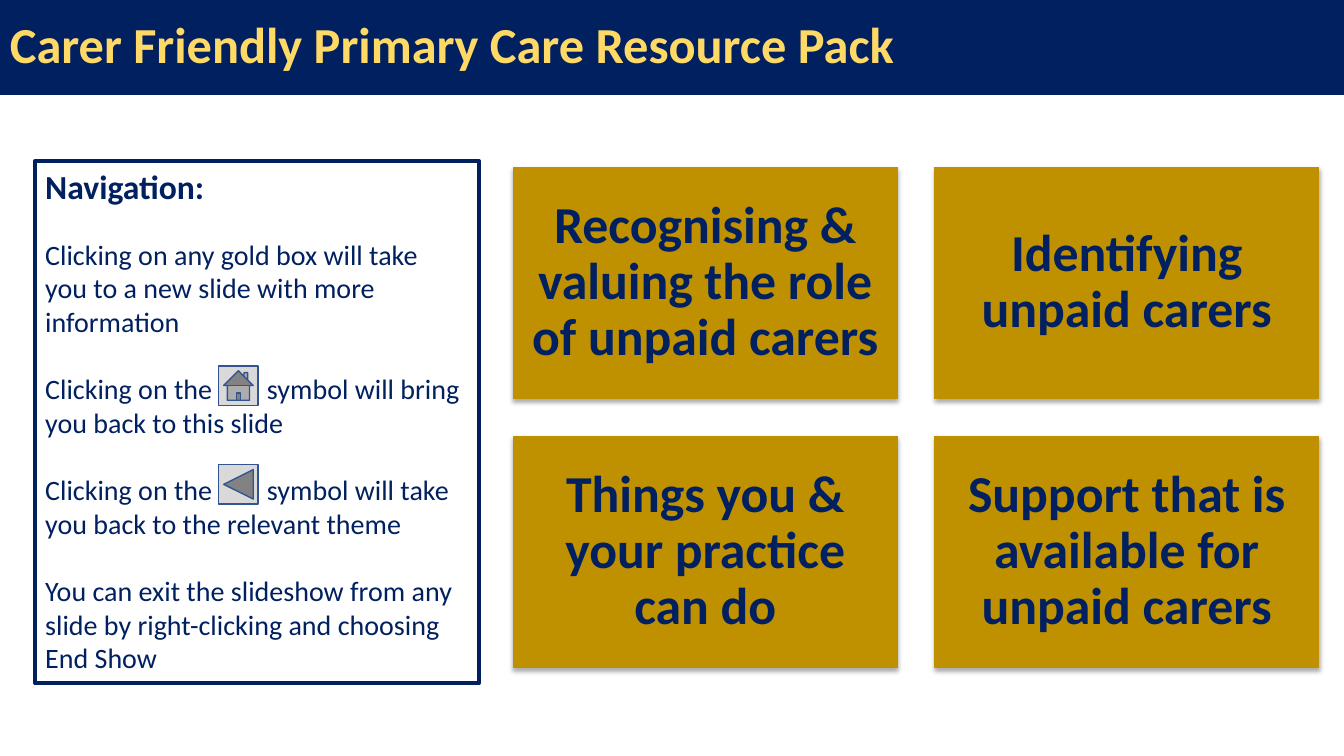
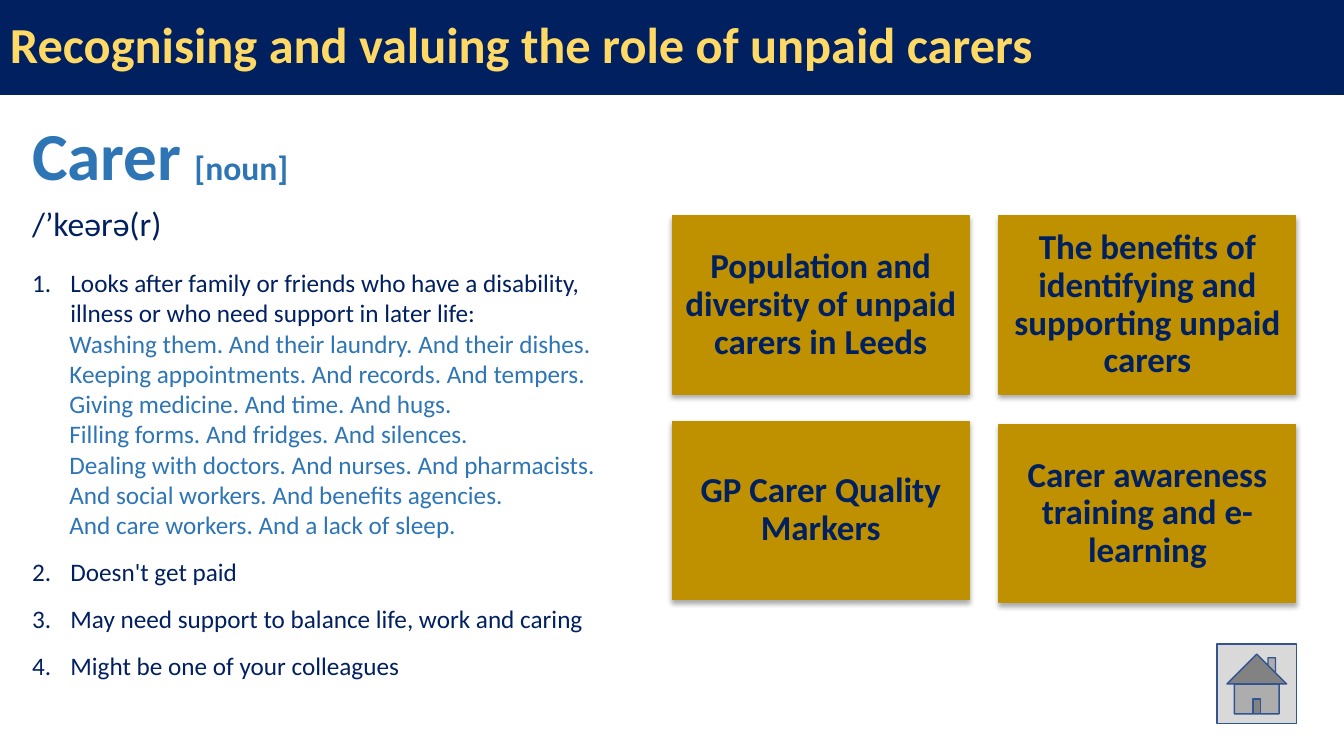
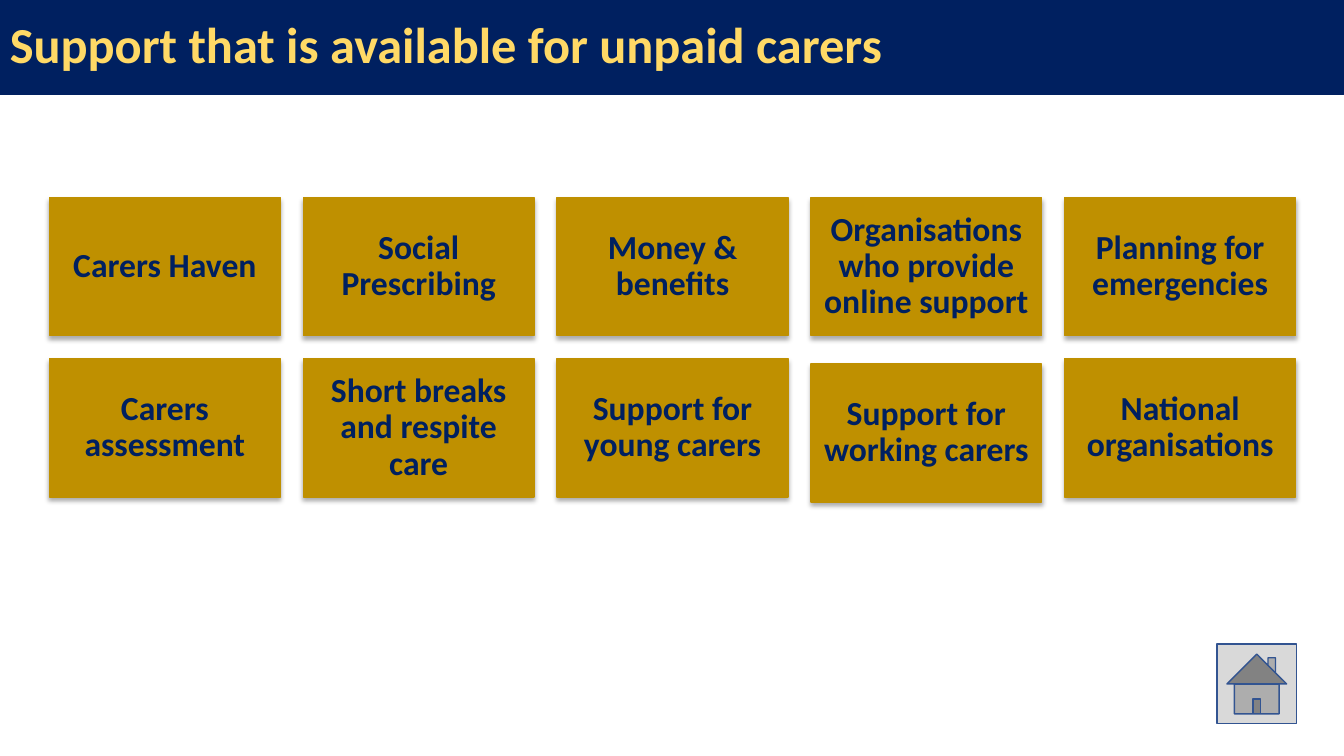
from dataclasses import dataclass

from lxml.etree import SubElement
from pptx import Presentation
from pptx.dml.color import RGBColor
from pptx.enum.shapes import MSO_SHAPE
from pptx.enum.text import MSO_ANCHOR, PP_ALIGN
from pptx.oxml.ns import qn
from pptx.util import Inches, Pt


@dataclass(frozen=True)
class Theme:
    """Colours, font and type sizes shared by the slides."""
    font: str = "Calibri"
    navy: str = "002060"
    gold: str = "BF9000"
    yellow: str = "FFD966"
    blue: str = "2E75B6"
    white: str = "FFFFFF"
    button: str = "D9D9D9"
    button_line: str = "325491"
    title: int = 36
    word: int = 48
    heading: int = 24
    guide: int = 20
    body: int = 18


T = Theme()


def apply(obj, values):
    """Set every attribute in a dict of format values."""
    for name, value in values.items():
        setattr(obj, name, value)


def add_run(p, text, size, color=T.navy, bold=False):
    """Append a formatted run to a paragraph."""
    r = p.add_run()
    r.text = text
    apply(r.font, {"name": T.font, "size": Pt(size), "bold": bold})
    r.font.color.rgb = RGBColor.from_string(color)


def add_paragraph(tf, runs, **values):
    """Add a paragraph, reusing the empty first one of the frame."""
    p = tf.paragraphs[0]
    if p.runs:
        p = tf.add_paragraph()
    apply(p, {"alignment": PP_ALIGN.LEFT, **values})
    for run in runs:
        add_run(p, *run)
    return p


def add_box(slide, box, fill, line, width=1, kind=MSO_SHAPE.RECTANGLE):
    """Add a flat filled shape with an outline."""
    sp = slide.shapes.add_shape(kind, *map(Inches, box))
    sp.fill.solid()
    sp.fill.fore_color.rgb = RGBColor.from_string(fill)
    sp.line.color.rgb = RGBColor.from_string(line)
    sp.line.width = Pt(width)
    sp.shadow.inherit = False
    sp.text_frame.word_wrap = True
    return sp


def add_shadow(sp):
    """Give a shape a soft shadow below it."""
    effects = sp._element.spPr.find(qn("a:effectLst"))
    outer = SubElement(effects, qn("a:outerShdw"), blurRad=str(Pt(3.5)), dist=str(Pt(2.2)),
                       dir="5400000", algn="ctr", rotWithShape="0")
    color = SubElement(outer, qn("a:srgbClr"), val="000000")
    SubElement(color, qn("a:alpha"), val="32000")


def set_indent(p, left, hanging=0, number=None):
    """Indent a paragraph and optionally number it from a given start."""
    pPr = p._p.get_or_add_pPr()
    pPr.set("marL", str(Inches(left)))
    pPr.set("indent", str(Inches(-hanging)))
    if number:
        SubElement(pPr, qn("a:buFont"), typeface="+mj-lt")
        SubElement(pPr, qn("a:buAutoNum"), type="arabicPeriod", startAt=str(number))


def set_tab(p, position):
    """Set one left tab stop."""
    tabs = SubElement(p._p.get_or_add_pPr(), qn("a:tabLst"))
    SubElement(tabs, qn("a:tab"), pos=str(Inches(position)), algn="l")


def add_title_slide(prs, title):
    """Add a blank slide with the title band."""
    slide = prs.slides.add_slide(prs.slide_layouts[6])
    sp = add_box(slide, (0, 0, 13.33, 0.94), T.navy, T.navy, 0.75)
    sp.text_frame.vertical_anchor = MSO_ANCHOR.MIDDLE
    add_paragraph(sp.text_frame, [(title, T.title, T.yellow, True)], line_spacing=0.9)
    return slide


def add_button(slide, left, top, size, kind=MSO_SHAPE.ACTION_BUTTON_HOME):
    """Add a square navigation button."""
    add_box(slide, (left, top, size, size), T.button, T.button_line, kind=kind)


def add_cards(slide, box, cols, card, labels, size, inset=0.1, nudges=None):
    """Spread equal gold cards over the box, row by row."""
    left, top, width, height = box
    w, h = card
    rows = len(labels) // cols
    step_x = (width - w) / (cols - 1)
    step_y = (height - h) / (rows - 1)
    for i, label in enumerate(labels):
        row, col = divmod(i, cols)
        y = top + row * step_y + (nudges or {}).get(i, 0)
        sp = add_box(slide, (left + col * step_x, y, w, h), T.gold, T.gold)
        add_shadow(sp)
        tf = sp.text_frame
        margins = {f"margin_{side}": Inches(inset) for side in ("left", "top", "right", "bottom")}
        apply(tf, {"vertical_anchor": MSO_ANCHOR.MIDDLE, **margins})
        add_paragraph(tf, [(label, size, T.navy, True)],
                      alignment=PP_ALIGN.CENTER, line_spacing=0.9)


def add_navigation(slide, box):
    """Add the framed navigation guide with its two symbols."""
    left, top = box[:2]
    tf = add_box(slide, box, T.white, T.navy, 3).text_frame
    apply(tf, {"vertical_anchor": MSO_ANCHOR.TOP, "margin_right": Inches(0.17)})
    add_paragraph(tf, [("Navigation:", T.heading, T.navy, True)])
    guides = (
        "Clicking on any gold box will take you to a new slide with more information",
        "Clicking on the\tsymbol will bring you back to this slide",
        "Clicking on the\tsymbol will take you back to the relevant theme",
        "You can exit the slideshow from any slide by right-clicking and choosing End Show",
    )
    for i, guide in enumerate(guides):
        p = add_paragraph(tf, [(guide, T.guide)], space_before=Pt(24 if i else 22))
        if "\t" in guide:
            set_tab(p, 2.2)
    add_button(slide, left + 1.82, top + 2.03, 0.39)
    add_button(slide, left + 1.82, top + 3.01, 0.39, MSO_SHAPE.ACTION_BUTTON_BACK_OR_PREVIOUS)


def add_definition(slide, box):
    """Add the dictionary entry for the word carer."""
    tf = slide.shapes.add_textbox(*map(Inches, box)).text_frame
    tf.word_wrap = True
    add_paragraph(tf, [("Carer", T.word, T.blue, True), (" ", 40, T.blue, True),
                       ("[noun]", T.heading, T.blue, True)])
    add_paragraph(tf, [("/’keərə(r)", T.heading)], space_before=Pt(7))
    p = add_paragraph(tf, [("Looks after family or friends who have a disability, illness "
                            "or who need support in later life:", T.body)], space_before=Pt(17))
    set_indent(p, 0.38, 0.38, 1)
    for task in (
        "Washing them. And their laundry. And their dishes.",
        "Keeping appointments. And records. And tempers.",
        "Giving medicine. And time. And hugs.",
        "Filling forms. And fridges. And silences.",
        "Dealing with doctors. And nurses. And pharmacists.",
        "And social workers. And benefits agencies.",
        "And care workers. And a lack of sleep.",
    ):
        set_indent(add_paragraph(tf, [(task, T.body, T.blue)], level=1), 0.37)
    for meaning in (
        "Doesn't get paid",
        "May need support to balance life, work and caring",
        "Might be one of your colleagues",
    ):
        p = add_paragraph(tf, [(meaning, T.body)], space_before=Pt(12))
        set_indent(p, 0.38, 0.38, 2)


def build_home(prs):
    """Build the home slide with the guide and four themes."""
    slide = add_title_slide(prs, "Carer Friendly Primary Care Resource Pack")
    add_cards(slide, (5.09, 1.66, 7.99, 4.96), 2, (3.81, 2.29), (
        "Recognising & valuing the role of unpaid carers",
        "Identifying unpaid carers",
        "Things you & your practice can do",
        "Support that is available for unpaid carers",
    ), 37, 0.15)
    add_navigation(slide, (0.35, 1.6, 4.4, 5.18))


def build_recognising(prs):
    """Build the slide that defines a carer."""
    slide = add_title_slide(prs, "Recognising and valuing the role of unpaid carers")
    add_cards(slide, (6.67, 2.14, 6.18, 3.81), 2, (2.94, 1.77), (
        "Population and diversity of unpaid carers in Leeds",
        "The benefits of identifying and supporting unpaid carers",
        "GP Carer Quality Markers",
        "Carer awareness training and e-learning",
    ), 25, nudges={3: 0.03})
    add_definition(slide, (0.22, 1.07, 5.99, 5.79))
    add_button(slide, 12.07, 6.39, 0.79)


def build_support(prs):
    """Build the slide that lists the available support."""
    slide = add_title_slide(prs, "Support that is available for unpaid carers")
    add_cards(slide, (0.49, 1.96, 12.36, 2.97), 5, (2.29, 1.37), (
        "Carers Haven",
        "Social Prescribing",
        "Money & benefits",
        "Organisations who provide online support",
        "Planning for emergencies",
        "Carers assessment",
        "Short breaks and respite care",
        "Support for young carers",
        "Support for working carers",
        "National organisations",
    ), 24, nudges={8: 0.05})
    add_button(slide, 12.07, 6.39, 0.79)


def main():
    """Build and save the deck."""
    prs = Presentation()
    apply(prs, {"slide_width": Inches(13.33), "slide_height": Inches(7.5)})
    for build in (build_home, build_recognising, build_support):
        build(prs)
    prs.save("out.pptx")


if __name__ == "__main__":
    main()
